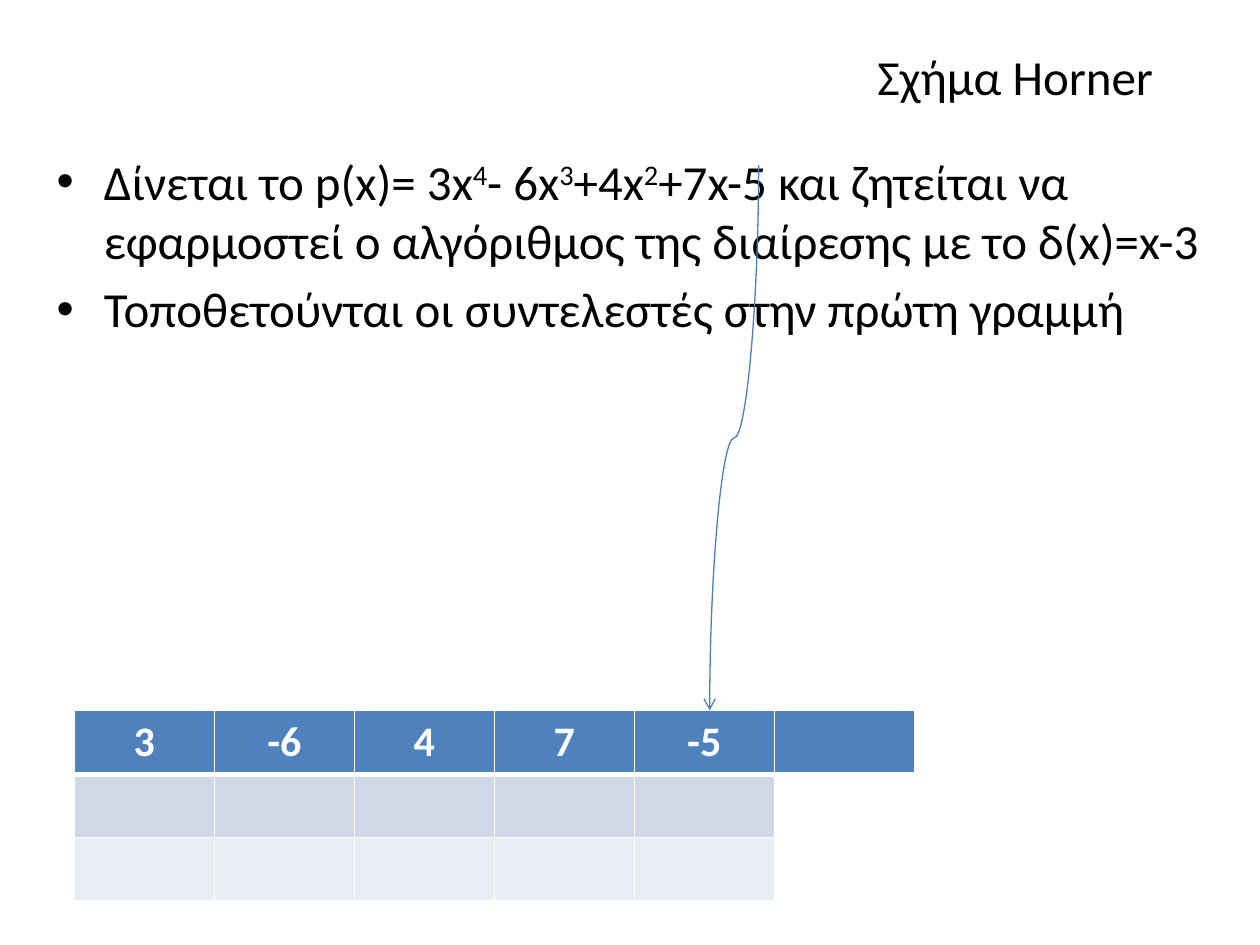
from pptx import Presentation
from pptx import util as u
from pptx.dml.color import RGBColor
from pptx.enum import shapes, text
from pptx.oxml.ns import qn
from lxml import etree

BLUE, BAND_DARK, BAND_LIGHT = "4F81BD", "D0D8E8", "E9EDF4"
WHITE, BLACK, CURVE_BLUE = "FFFFFF", "000000", "4B7EBC"

TITLE = "Σχήμα Horner"
# Each bullet alternates normal text and superscripts.
BULLETS = [
    ["Δίνεται το p(x)= 3x", "4", "- 6x", "3", "+4x", "2",
     "+7x-5 και ζητείται να εφαρμοστεί ο αλγόριθμος της διαίρεσης με το δ(x)=x-3"],
    ["Τοποθετούνται οι συντελεστές στην πρώτη γραμμή"],
]
COEFFICIENTS = ["3", "-6", "4", "7", "-5", ""]
ROW_FILLS = [
    [BLUE] * 6,
    [BAND_DARK] * 5 + [None],
    [BAND_LIGHT] * 5 + [None],
]


def color(value):
    return RGBColor.from_string(value)


class HornerSlide:
    body_font = {"name": "Calibri", "size": u.Pt(28)}
    header_font = {"name": "Calibri", "size": u.Pt(24), "bold": True}

    def __init__(self, deck):
        self.page = deck.slides.add_slide(deck.slide_layouts[1])

    def place(self, box, left, top, width, height):
        frame = {"left": left, "top": top, "width": width, "height": height}
        for name, value in frame.items():
            setattr(box, name, u.Pt(value))

    def span(self, para, words, style, fill):
        span = para.add_run()
        span.text = words
        for name, value in style.items():
            setattr(span.font, name, value)
        span.font.color.rgb = color(fill)
        return span

    def title(self, words, *frame):
        box = self.page.shapes.title
        self.place(box, *frame)
        para = box.text_frame.paragraphs[0]
        para.alignment = text.PP_ALIGN.RIGHT
        self.span(para, words, self.body_font, BLACK)

    def bullets(self, items, *frame):
        box = self.page.placeholders[1]
        self.place(box, *frame)
        for number, pieces in enumerate(items):
            paras = box.text_frame
            para = paras.add_paragraph() if number else paras.paragraphs[0]
            for index, words in enumerate(pieces):
                span = self.span(para, words, self.body_font, BLACK)
                if index % 2:
                    span.font._element.set("baseline", "30000")

    def borders(self, cell, bottom):
        props = cell._tc.get_or_add_tcPr()
        for side, width in {"L": 1, "R": 1, "T": 1, "B": bottom}.items():
            line = etree.SubElement(props, qn(f"a:ln{side}"), w=str(u.Pt(width)))
            fill = etree.SubElement(line, qn("a:solidFill"))
            etree.SubElement(fill, qn("a:srgbClr"), val=WHITE)

    def table(self, header, row_fills, *frame):
        lengths = [u.Pt(value) for value in frame]
        grid = self.page.shapes.add_table(len(row_fills), len(header), *lengths).table
        grid.first_row = grid.horz_banding = False
        for row, fills in enumerate(row_fills):
            for column, fill in enumerate(fills):
                cell = grid.cell(row, column)
                self.borders(cell, bottom=1 if row else 3)
                if fill:
                    cell.fill.solid()
                    cell.fill.fore_color.rgb = color(fill)
                else:
                    cell.fill.background()
                if row == 0 and header[column]:
                    para = cell.text_frame.paragraphs[0]
                    para.alignment = text.PP_ALIGN.CENTER
                    self.span(para, header[column], self.header_font, WHITE)

    def falling_curve(self, x1, y1, x2, y2):
        """Draw a curved arrow that leaves and arrives vertically."""
        middle_x, middle_y = (x1 + x2) / 2, (y1 + y2) / 2
        half_length, half_shift = (y2 - y1) / 2, (x1 - x2) / 2
        curve = self.page.shapes.add_connector(
            shapes.MSO_CONNECTOR.CURVE,
            u.Pt(middle_x - half_length), u.Pt(middle_y - half_shift),
            u.Pt(middle_x + half_length), u.Pt(middle_y + half_shift))
        curve.line.width = u.Pt(0.75)
        curve.line.color.rgb = color(CURVE_BLUE)
        props = curve._element.spPr
        props.find(qn("a:xfrm")).set("rot", "5400000")
        etree.SubElement(props.find(qn("a:ln")), qn("a:tailEnd"), type="arrow")
        etree.SubElement(props, qn("a:effectLst"))


def main():
    deck = Presentation()
    deck.slide_width, deck.slide_height = u.Pt(720), u.Pt(540)
    slide = HornerSlide(deck)
    slide.bullets(BULLETS, 25.2, 82.8, 669, 317.5)
    slide.title(TITLE, 54, 21, 612, 45)
    slide.table(COEFFICIENTS, ROW_FILLS, 42.5, 406, 480, 108)
    slide.falling_curve(433.5, 94.5, 405.5, 406)
    deck.save("out.pptx")


if __name__ == "__main__":
    main()
